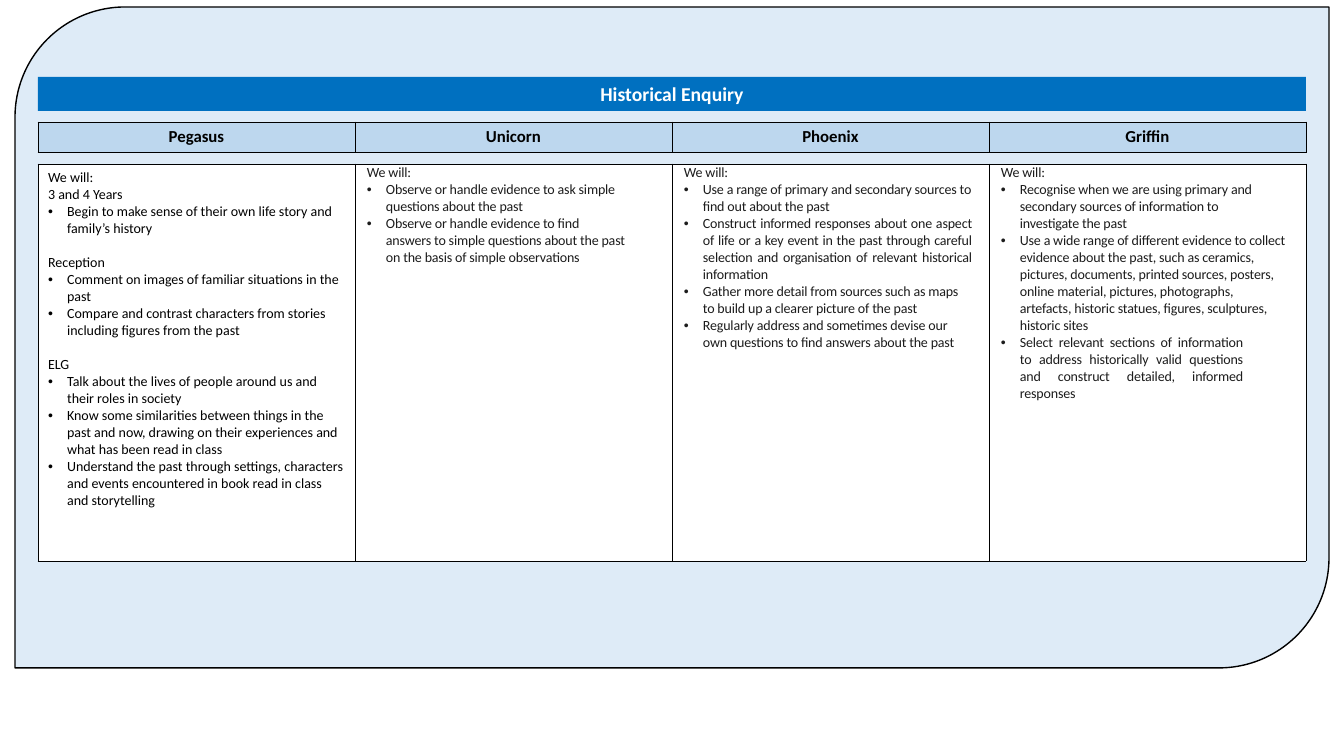
from lxml import etree
from pptx import Presentation
from pptx import util as u
from pptx.dml.color import RGBColor
from pptx.enum import shapes, text
from pptx.oxml import ns

PX = 9071.43  # EMU per px, 100.8 px to the inch
BLACK = RGBColor(0x00, 0x00, 0x00)
INK = RGBColor(0x1C, 0x1C, 0x1C)
WHITE = RGBColor(0xFF, 0xFF, 0xFF)
PALE = RGBColor(0xDE, 0xEB, 0xF7)
LIGHT = RGBColor(0xBD, 0xD7, 0xEE)
BLUE = RGBColor(0x00, 0x70, 0xC0)
LEFT, COL_W = 38, 317
INDENT = 19
JUSTIFY = text.PP_ALIGN.JUSTIFY

# One column a class: (kind, text, right margin in px)
columns = {
    "Pegasus": [
        ("plain", "We will:", 0),
        ("plain", "3 and 4 Years", 0),
        ("bullet", "Begin to make sense of their own life story and family’s history", 0),
        ("stage", "Reception", 0),
        ("bullet", "Comment on images of familiar situations in the past", 0),
        ("bullet", "Compare and contrast characters from stories including figures "
                   "from the past", 0),
        ("stage", "ELG", 0),
        ("bullet", "Talk about the lives of people around us and their roles in society", 0),
        ("bullet", "Know some similarities between things in the past and now, drawing on "
                   "their experiences and what has been read in class", 0),
        ("bullet", "Understand the past through settings, characters and events "
                   "encountered in book read in class and storytelling", 0),
    ],
    "Unicorn": [
        ("plain", "We will:", 0),
        ("bullet", "Observe or handle evidence to ask simple questions about the past", 35),
        ("bullet", "Observe or handle evidence to find answers to simple questions about "
                   "the past on the basis of simple observations", 35),
    ],
    "Phoenix": [
        ("plain", "We will:", 0),
        ("bullet", "Use a range of primary and secondary sources to find out about the past", 5),
        ("justified", "Construct informed responses about one aspect of life or a key event "
                      "in the past through careful selection and organisation of relevant "
                      "historical information", 5),
        ("bullet", "Gather more detail from sources such as maps to build up a clearer "
                   "picture of the past", 5),
        ("bullet", "Regularly address and sometimes devise our own questions to find "
                   "answers about the past", 5),
    ],
    "Griffin": [
        ("plain", "We will:", 0),
        ("bullet", "Recognise when we are using primary and secondary sources of "
                   "information to investigate the past", 20),
        ("bullet", "Use a wide range of different evidence to collect evidence about the "
                   "past, such as ceramics, pictures, documents, printed sources, posters, "
                   "online material, pictures, photographs, artefacts, historic statues, "
                   "figures, sculptures, historic sites", 8),
        ("justified", "Select relevant sections of information to address historically valid "
                      "questions and construct detailed, informed responses", 51),
    ],
}


def px(n):
    return u.Emu(round(n * PX))


def add_run(p, words, size, color, bold=False):
    r = p.add_run()
    r.text = words
    for name, value in dict(name="Calibri", size=u.Pt(size), bold=bold).items():
        setattr(r.font, name, value)
    r.font.color.rgb = color
    return r


prs = Presentation()
prs.slide_width, prs.slide_height = px(1344), px(756)
s = prs.slides.add_slide(prs.slide_layouts[6])

panel = s.shapes.add_shape(shapes.MSO_SHAPE.ROUND_2_DIAG_RECTANGLE,
                           px(15), px(7), px(1314), px(661))
banner = s.shapes.add_shape(shapes.MSO_SHAPE.RECTANGLE,
                            px(LEFT), px(77), px(4 * COL_W), px(34))
for sp, color in ((panel, PALE), (banner, BLUE)):
    sp.shadow.inherit = False
    sp.fill.solid()
    sp.fill.fore_color.rgb = color
panel.line.color.rgb = BLACK
panel.line.width = u.Pt(1)
banner.line.fill.background()
p = banner.text_frame.paragraphs[0]
p.alignment = text.PP_ALIGN.CENTER
add_run(p, "Historical Enquiry", 14, WHITE, True)

tables = []
for top, height, color in ((122, 30, LIGHT), (164, 397, WHITE)):
    table = s.shapes.add_table(1, 4, px(LEFT), px(top), px(4 * COL_W), px(height)).table
    table.first_row = table.horz_banding = False
    for cell in table.iter_cells():
        tcPr = cell._tc.get_or_add_tcPr()
        for side in ("a:lnL", "a:lnR", "a:lnT", "a:lnB"):
            ln = etree.SubElement(tcPr, ns.qn(side), w=str(u.Pt(0.5)))
            fill = etree.SubElement(ln, ns.qn("a:solidFill"))
            etree.SubElement(fill, ns.qn("a:srgbClr"), val=str(BLACK))
        cell.fill.solid()
        cell.fill.fore_color.rgb = color
    tables.append(table)
header, body = tables

for i, (name, items) in enumerate(columns.items()):
    p = header.cell(0, i).text_frame.paragraphs[0]
    p.alignment = text.PP_ALIGN.CENTER
    add_run(p, name, 12, BLACK, True)

    cell = body.cell(0, i)
    if i > 0:
        cell.margin_left = cell.margin_right = px(12)
        cell.margin_top = cell.margin_bottom = 0
    tf = cell.text_frame
    for j, (kind, words, right) in enumerate(items):
        p = tf.add_paragraph() if j else tf.paragraphs[0]
        r = add_run(p, words, 10, INK if i else BLACK)
        if i > 0:
            r.font._element.set("spc", "-10")
        if kind == "stage":
            p.space_before = u.Pt(12.2)
        if kind == "justified":
            p.alignment = JUSTIFY
        if kind in ("bullet", "justified"):
            pPr = p._p.get_or_add_pPr()
            for key, value in dict(marL=INDENT, marR=right, indent=-INDENT).items():
                pPr.set(key, str(px(value)))
            etree.SubElement(pPr, ns.qn("a:buFont"), typeface="Arial")
            etree.SubElement(pPr, ns.qn("a:buChar"), char="•")

prs.save("out.pptx")
